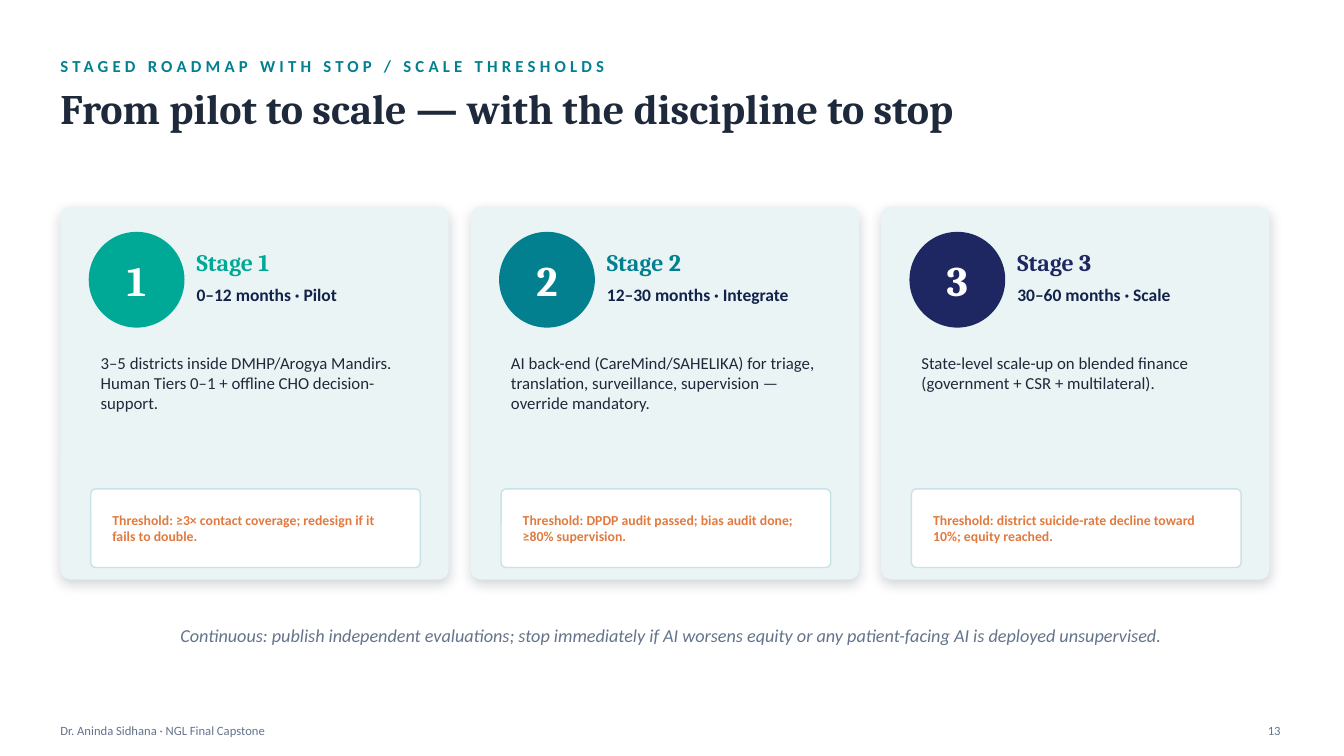
from lxml import etree
from pptx import Presentation
from pptx.dml.color import RGBColor
from pptx.enum.shapes import MSO_SHAPE as SHAPE
from pptx.enum.text import MSO_ANCHOR as ANCHOR, MSO_AUTO_SIZE, PP_ALIGN as ALIGN
from pptx.oxml import parse_xml
from pptx.oxml.ns import nsdecls
from pptx.util import Inches, Pt

WHITE = RGBColor(0xFF, 0xFF, 0xFF)
INK = RGBColor(0x1E, 0x29, 0x3B)
NAVY = RGBColor(0x12, 0x22, 0x4A)
MUTED = RGBColor(0x64, 0x74, 0x8B)
TEAL = RGBColor(0x02, 0x80, 0x90)
GREEN = RGBColor(0x00, 0xA8, 0x96)
INDIGO = RGBColor(0x1E, 0x27, 0x61)
ORANGE = RGBColor(0xE0, 0x7A, 0x3F)
CARD = RGBColor(0xEA, 0xF4, 0xF5)
CARD_LINE = RGBColor(0xC9, 0xE2, 0xE5)

SANS, SERIF = "Calibri", "Cambria"
MARGIN = 0.6
CARD_W, CARD_H, CARD_TOP, CARD_GAP = 3.85, 3.7, 2.05, 0.22
NO_INSET = (0, 0)
TEXT_INSET = (0.1, 0.05)

STAGES = [
    ("1", GREEN, "0–12 months · Pilot",
     "3–5 districts inside DMHP/Arogya Mandirs. Human Tiers 0–1 + offline CHO "
     "decision-support.",
     "Threshold: ≥3× contact coverage; redesign if it fails to double."),
    ("2", TEAL, "12–30 months · Integrate",
     "AI back-end (CareMind/SAHELIKA) for triage, translation, surveillance, "
     "supervision — override mandatory.",
     "Threshold: DPDP audit passed; bias audit done; ≥80% supervision."),
    ("3", INDIGO, "30–60 months · Scale",
     "State-level scale-up on blended finance (government + CSR + multilateral).",
     "Threshold: district suicide-rate decline toward 10%; equity reached."),
]


def write(sp, text, size, color, font=SANS, bold=False, italic=False,
          align=ALIGN.LEFT, anchor=ANCHOR.MIDDLE, inset=NO_INSET):
    tf = sp.text_frame
    tf.word_wrap = True
    tf.auto_size = MSO_AUTO_SIZE.NONE
    tf.vertical_anchor = anchor
    tf.margin_left = tf.margin_right = Inches(inset[0])
    tf.margin_top = tf.margin_bottom = Inches(inset[1])
    p = tf.paragraphs[0]
    p.text = text
    p.alignment = align
    p.font.name, p.font.size = font, Pt(size)
    p.font.bold, p.font.italic = bold, italic
    p.font.color.rgb = color
    return p


def add_text(slide, box, text, size, color, **style):
    sp = slide.shapes.add_textbox(*map(Inches, box))
    return write(sp, text, size, color, **style)


def add_panel(slide, kind, box, fill, line=None, corner=None):
    sp = slide.shapes.add_shape(kind, *map(Inches, box))
    sp.shadow.inherit = False
    sp.fill.solid()
    sp.fill.fore_color.rgb = fill
    if line is None:
        sp.line.fill.background()
    else:
        sp.line.color.rgb = line
        sp.line.width = Pt(1)
    if corner is not None:
        sp.adjustments[0] = corner
    return sp


def add_soft_shadow(sp):
    effects = sp._element.spPr.find("{*}effectLst")
    effects.append(parse_xml(
        f'<a:outerShdw {nsdecls("a")} blurRad="{Pt(9)}" dist="{Pt(3)}" '
        'dir="5400000" algn="bl" rotWithShape="0"><a:srgbClr val="0B1733">'
        '<a:alpha val="18000"/></a:srgbClr></a:outerShdw>'))


def add_header(slide, x, y):
    p = add_text(slide, (x, y, 9, 0.3),
                 "STAGED ROADMAP WITH STOP / SCALE THRESHOLDS", 12, TEAL, bold=True)
    p.runs[0].font._element.set("spc", "300")
    title = slide.shapes.title
    title.left, title.top = Inches(x), Inches(y + 0.32)
    title.width, title.height = Inches(12.1), Inches(0.95)
    write(title, "From pilot to scale — with the discipline to stop", 30, INK,
          font=SERIF, bold=True, anchor=ANCHOR.TOP)


def add_stage_card(slide, x, y, number, color, period, scope, threshold):
    card = add_panel(slide, SHAPE.ROUNDED_RECTANGLE, (x, y, CARD_W, CARD_H),
                     CARD, corner=0.027)
    add_soft_shadow(card)
    badge = add_panel(slide, SHAPE.OVAL, (x + 0.28, y + 0.25, 0.95, 0.95), color)
    write(badge, number, 30, WHITE, font=SERIF, bold=True, align=ALIGN.CENTER)
    add_text(slide, (x + 1.35, y + 0.35, 2.4, 0.4), f"Stage {number}", 17, color,
             font=SERIF, bold=True)
    add_text(slide, (x + 1.35, y + 0.77, 2.4, 0.4), period, 12.5, NAVY,
             bold=True, anchor=ANCHOR.TOP)
    add_text(slide, (x + 0.3, y + 1.4, 3.3, 1.3), scope, 12, INK,
             anchor=ANCHOR.TOP, inset=TEXT_INSET)
    gate = add_panel(slide, SHAPE.ROUNDED_RECTANGLE, (x + 0.3, y + 2.8, 3.27, 0.78),
                     WHITE, line=CARD_LINE, corner=0.064)
    write(gate, threshold, 9.8, ORANGE, bold=True, inset=(0.2, 0.05))


def add_footer(slide, y):
    add_text(slide, (0.5, y, 8, 0.3), "Dr. Aninda Sidhana · NGL Final Capstone",
             9, MUTED, inset=TEXT_INSET)
    add_text(slide, (12.4, y, 0.4, 0.3), "13", 9, MUTED, align=ALIGN.RIGHT,
             inset=TEXT_INSET)


def main():
    prs = Presentation()
    prs.slide_width, prs.slide_height = Inches(13.33), Inches(7.5)
    slide = prs.slides.add_slide(prs.slide_layouts[5])
    add_header(slide, MARGIN, 0.5)
    for i, stage in enumerate(STAGES):
        add_stage_card(slide, MARGIN + i * (CARD_W + CARD_GAP), CARD_TOP, *stage)
    add_text(slide, (MARGIN, 6.05, 12.1, 0.5),
             "Continuous: publish independent evaluations; stop immediately if AI "
             "worsens equity or any patient-facing AI is deployed unsupervised.",
             13, MUTED, italic=True, align=ALIGN.CENTER, inset=TEXT_INSET)
    add_footer(slide, 7.1)
    prs.save("out.pptx")


if __name__ == "__main__":
    main()
